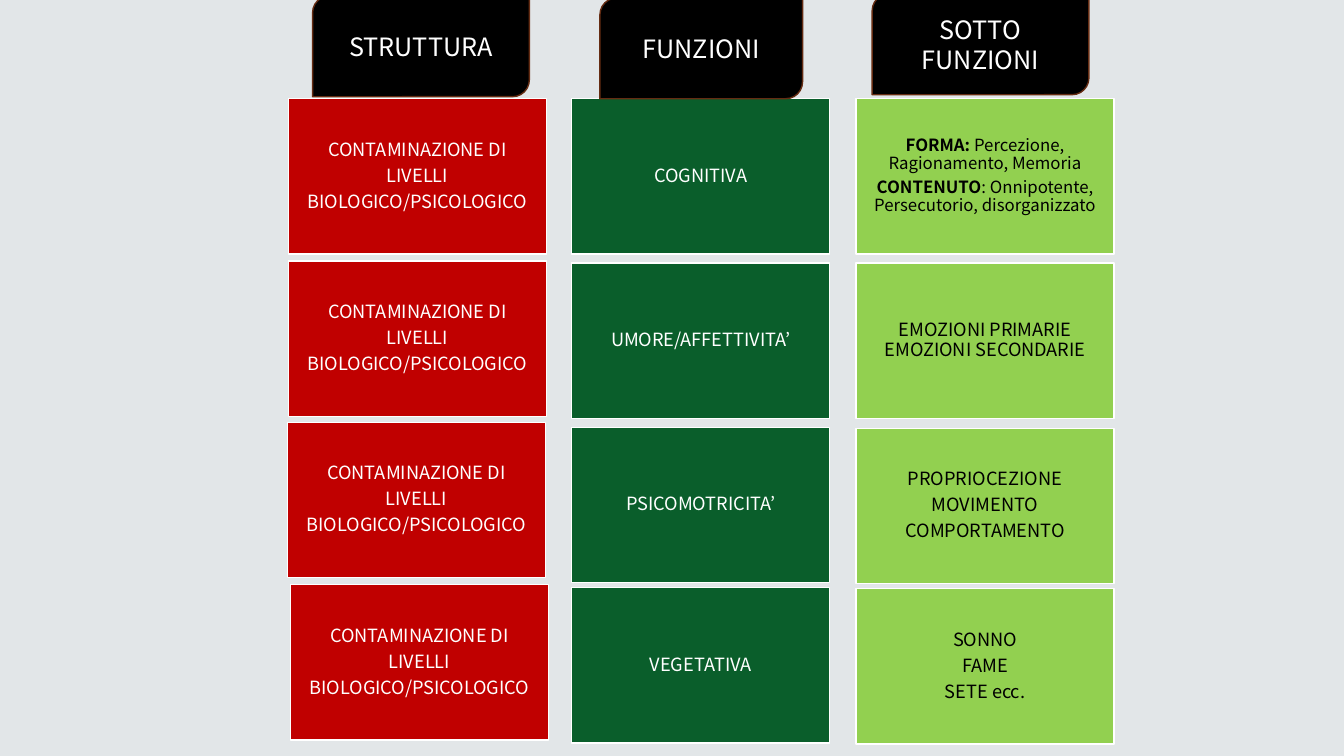
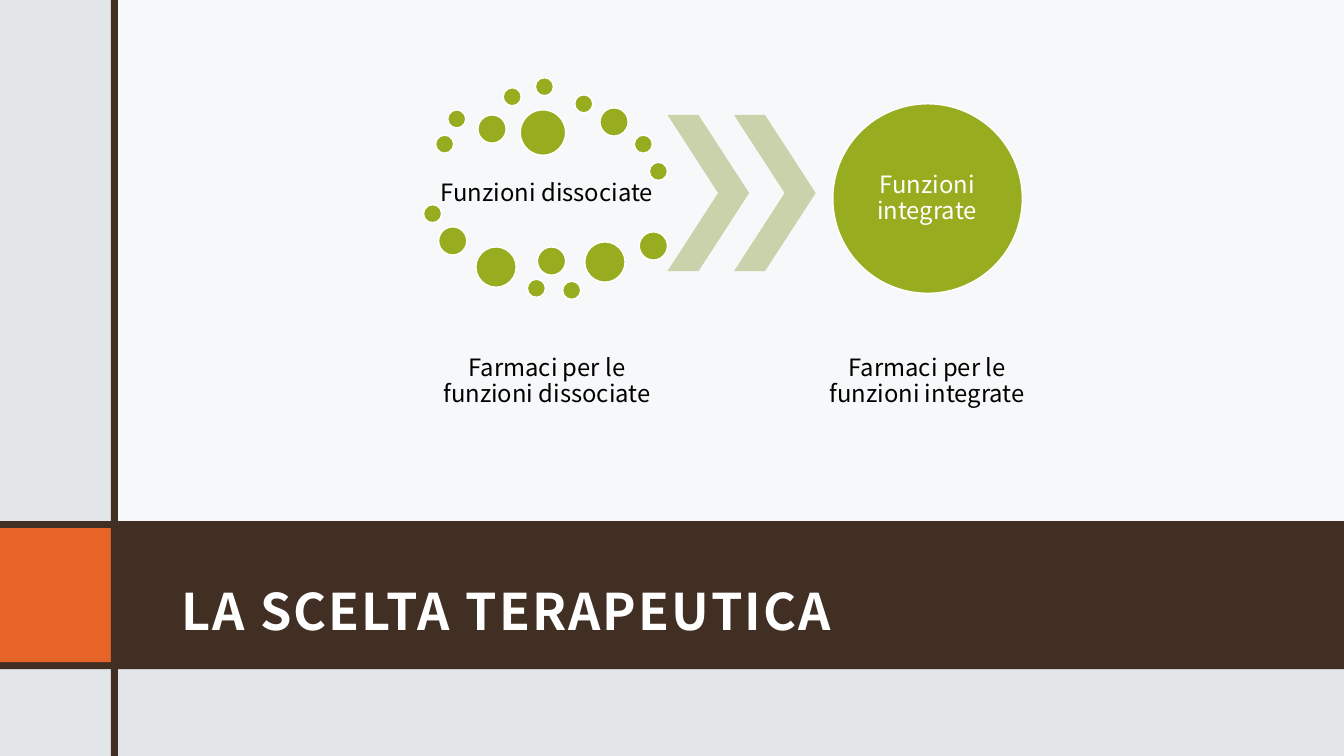
import pptx
import pptx.util
import pptx.dml.color
import pptx.enum.shapes
import pptx.enum.text
import pptx.oxml.ns
import lxml.etree

RGBColor = pptx.dml.color.RGBColor
SHAPE = pptx.enum.shapes.MSO_SHAPE
ALIGN = pptx.enum.text.PP_ALIGN
PX = 9144  # 100 px to the inch
SLIDE_WIDTH, SLIDE_HEIGHT = 1333, 750
FONT = "Noto Sans CJK JP"

# Colours
BACKGROUND = RGBColor(0xE2, 0xE6, 0xE8)
WHITE = RGBColor(0xFF, 0xFF, 0xFF)
BLACK = RGBColor(0x00, 0x00, 0x00)
RED = RGBColor(0xC0, 0x00, 0x00)
DARK_GREEN = RGBColor(0x0A, 0x5E, 0x2B)
LIGHT_GREEN = RGBColor(0x92, 0xD0, 0x50)
HEADER_LINE = RGBColor(0x65, 0x2C, 0x12)
BROWN = RGBColor(0x41, 0x2F, 0x24)
ORANGE = RGBColor(0xE7, 0x64, 0x29)
OLIVE = RGBColor(0x98, 0xAC, 0x1F)
PALE_OLIVE = RGBColor(0xCA, 0xD2, 0xAC)

# Content of the functions slide: a paragraph is a list of (text, bold) runs or a string
CARD_WIDTH, CARD_HEIGHT = 256, 154
CONTAMINATION = ["CONTAMINAZIONE DI", "LIVELLI", "BIOLOGICO/PSICOLOGICO"]
COLUMNS = [
    {"header": "STRUTTURA", "header_box": (310, -4, 215, 100),
     "fill": RED, "color": WHITE,
     "cards": [(286, 98, CONTAMINATION), (286, 259, CONTAMINATION),
               (285, 419, CONTAMINATION), (288, 580, CONTAMINATION)]},
    {"header": "FUNZIONI", "header_box": (595, -2, 201, 100),
     "fill": DARK_GREEN, "color": WHITE,
     "cards": [(567, 98, ["COGNITIVA"]), (567, 261, ["UMORE/AFFETTIVITA’"]),
               (567, 424, ["PSICOMOTRICITA’"]), (567, 583, ["VEGETATIVA"])]},
    {"header": "SOTTO FUNZIONI", "header_box": (865, -6, 215, 100),
     "fill": LIGHT_GREEN, "color": BLACK,
     "cards": [
         (849, 98, [
             [("FORMA: ", True), ("Percezione, Ragionamento, Memoria", False)],
             [("CONTENUTO", True),
              (": Onnipotente, Persecutorio, disorganizzato", False)]]),
         (849, 261, ["EMOZIONI PRIMARIE EMOZIONI SECONDARIE"]),
         (849, 425, ["PROPRIOCEZIONE", "MOVIMENTO", "COMPORTAMENTO"]),
         (849, 584, ["SONNO", "FAME", "SETE ecc."])]},
]

# Content of the therapy slide
TITLE = "LA SCELTA TERAPEUTICA"
LABELS = [
    ("Funzioni dissociate", (432, 156, 221, 73), BLACK),
    ("Farmaci per le funzioni dissociate", (432, 310, 221, 137), BLACK),
    ("Funzioni integrate", (853, 131, 133, 133), WHITE),
    ("Farmaci per le funzioni integrate", (809, 310, 221, 137), BLACK),
]
DOTS = {  # diameter: (left, top) of each dot
    18: [(432, 134), (444, 109), (499, 87), (531, 77), (570, 94), (629, 134),
         (644, 161), (420, 203), (523, 277), (558, 279)],
    28: [(474, 114), (595, 107), (435, 225), (533, 245), (634, 230)],
    40: [(472, 245), (580, 240)],
    45: [(516, 109)],
}
INTEGRATED_CIRCLE = (826, 103, 188, 188)
CHEVRON_LEFTS = [662, 728]


def add_slide(presentation):
    slide = presentation.slides.add_slide(presentation.slide_layouts[6])
    slide.background.fill.solid()
    slide.background.fill.fore_color.rgb = BACKGROUND
    return slide


def add_shape(slide, box, fill, kind=SHAPE.RECTANGLE, line=None, opacity=None):
    shape = slide.shapes.add_shape(kind, *[value * PX for value in box])
    shape.shadow.inherit = False
    shape.fill.solid()
    shape.fill.fore_color.rgb = fill
    if opacity is not None:
        color = shape.fill._xPr.find(".//" + pptx.oxml.ns.qn("a:srgbClr"))
        alpha = lxml.etree.SubElement(color, pptx.oxml.ns.qn("a:alpha"))
        alpha.set("val", str(opacity * 1000))
    if line is None:
        shape.line.fill.background()
    else:
        shape.line.color.rgb = line
        shape.line.width = pptx.util.Pt(1)
    return shape


def add_text_box(slide, box):
    return slide.shapes.add_textbox(*[value * PX for value in box])


def write_text(shape, paragraphs, size, color=WHITE, bold=False, align=ALIGN.CENTER,
               line_spacing=0.9, space_after=0, insets=(5, 5, 5, 5), tracking=None):
    frame = shape.text_frame
    frame.word_wrap = True
    frame.vertical_anchor = pptx.enum.text.MSO_ANCHOR.MIDDLE
    (frame.margin_left, frame.margin_top,
     frame.margin_right, frame.margin_bottom) = [inset * PX for inset in insets]
    for index, content in enumerate(paragraphs):
        paragraph = frame.add_paragraph() if index else frame.paragraphs[0]
        paragraph.alignment = align
        paragraph.line_spacing = line_spacing
        paragraph.space_after = pptx.util.Pt(space_after)
        runs = [(content, bold)] if isinstance(content, str) else content
        for text, run_bold in runs:
            run = paragraph.add_run()
            run.text = text
            run.font.name = FONT
            run.font.size = pptx.util.Pt(size)
            run.font.bold = run_bold
            run.font.color.rgb = color
            if tracking is not None:
                run._r.get_or_add_rPr().set("spc", str(tracking))


def build_functions_slide(presentation):
    slide = add_slide(presentation)
    for column in COLUMNS:
        # Cards
        for left, top, paragraphs in column["cards"]:
            card = add_shape(slide, (left, top, CARD_WIDTH, CARD_HEIGHT),
                             column["fill"], line=WHITE)
            size = 13 if isinstance(paragraphs[0], str) else 12
            write_text(card, paragraphs, size, color=column["color"],
                       space_after=round(size * 0.35, 1))
        # Column header
        header = add_shape(slide, column["header_box"], BLACK,
                           kind=SHAPE.ROUND_2_DIAG_RECTANGLE, line=HEADER_LINE)
        write_text(header, [column["header"]], 18, line_spacing=1.0,
                   insets=(10, 5, 10, 5))


def build_therapy_slide(presentation):
    slide = add_slide(presentation)
    # Panel, title band and bars
    add_shape(slide, (114, 0, SLIDE_WIDTH - 114, 517), WHITE, opacity=75)
    add_shape(slide, (0, 517, SLIDE_WIDTH, 147), BROWN)
    write_text(add_text_box(slide, (168, 533, 1095, 113)), [TITLE], 36, bold=True,
               align=ALIGN.LEFT, line_spacing=1.5, space_after=6,
               insets=(12, 12, 12, 10), tracking=150)
    add_shape(slide, (0, 524, 110, 133), ORANGE)
    add_shape(slide, (110, 0, 7, SLIDE_HEIGHT), BROWN)

    # Scattered dots, arrows and the whole circle
    for diameter, corners in DOTS.items():
        for left, top in corners:
            add_shape(slide, (left, top, diameter, diameter), OLIVE,
                      kind=SHAPE.OVAL, line=WHITE)
    for left in CHEVRON_LEFTS:
        chevron = add_shape(slide, (left, 114, 81, 155), PALE_OLIVE, kind=SHAPE.CHEVRON)
        chevron.adjustments[0] = 0.62
    add_shape(slide, INTEGRATED_CIRCLE, OLIVE, kind=SHAPE.OVAL, line=WHITE)

    # Labels
    for text, box, color in LABELS:
        write_text(add_text_box(slide, box), [text], 17, color=color,
                   space_after=6, insets=(2, 2, 2, 2))


def main():
    presentation = pptx.Presentation()
    presentation.slide_width = SLIDE_WIDTH * PX
    presentation.slide_height = SLIDE_HEIGHT * PX
    build_functions_slide(presentation)
    build_therapy_slide(presentation)
    presentation.save("out.pptx")


if __name__ == "__main__":
    main()
